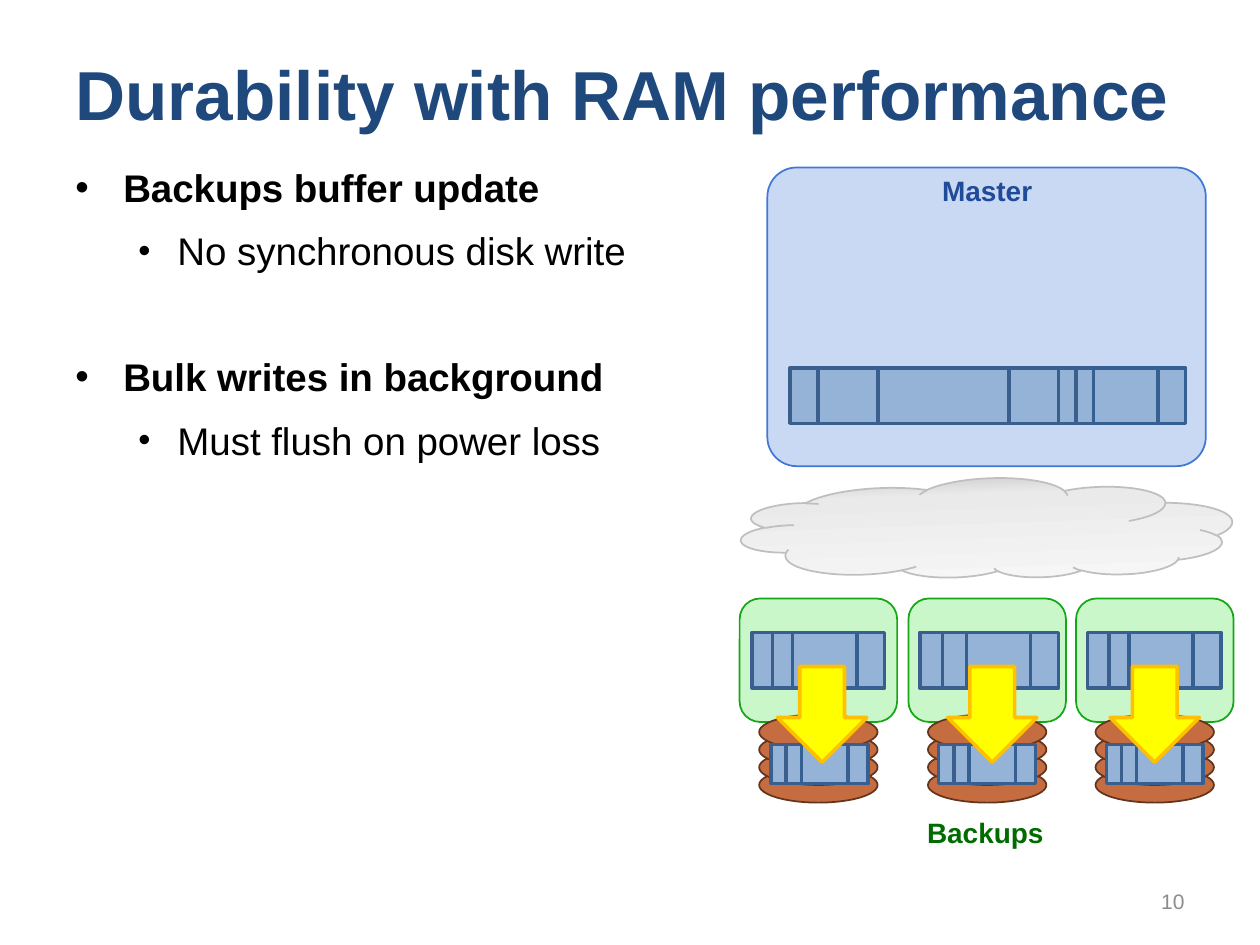
from copy import deepcopy
from typing import NamedTuple

from lxml import etree
from pptx import Presentation
from pptx.dml.color import RGBColor
from pptx.enum.shapes import MSO_SHAPE
from pptx.enum.text import MSO_ANCHOR, MSO_AUTO_SIZE, PP_ALIGN
from pptx.oxml.ns import qn
from pptx.util import Inches, Pt

RECT, ROUND = MSO_SHAPE.RECTANGLE, MSO_SHAPE.ROUNDED_RECTANGLE
OVAL, CLOUD, DOWN = MSO_SHAPE.OVAL, MSO_SHAPE.CLOUD, MSO_SHAPE.DOWN_ARROW
LEFT, CENTER, RIGHT = PP_ALIGN.LEFT, PP_ALIGN.CENTER, PP_ALIGN.RIGHT
TOP, MIDDLE = MSO_ANCHOR.TOP, MSO_ANCHOR.MIDDLE

COLS, ROWS = 1000, 750
CELL = Inches(0.01)
FONT = "Arial"
COLORS = {
    "title": "1F497D", "text": "000000", "number": "8C8C8C",
    "master": "C9D8F3", "master_line": "4177D7", "master_text": "204B98",
    "backup": "C9F7C9", "backup_line": "15A715", "backup_text": "006C00",
    "disk": "C56D41", "disk_line": "64351E",
    "log": "95B3D7", "log_line": "3A5F8C", "log_tail_line": "376092",
    "arrow": "FFFF00", "arrow_line": "FFC000",
    "cloud_line": "BFBFBF", "cloud_light": "F8F8F8",
    "cloud_mid": "EAEAEA", "cloud_dark": "C0C0C0",
}


class Box(NamedTuple):
    col: float
    row: float
    cols: float
    rows: float

    def emu(self) -> tuple:
        return tuple(round(v * CELL) for v in self)


class Backup(NamedTuple):
    left: int
    log_left: int
    log_widths: tuple
    disk_log_left: int
    arrow_left: int


class Bullet(NamedTuple):
    text: str
    level: int
    before: float


MASTER_LOG = (22, 48, 104, 39, 14, 14, 51, 22)
DISK_LOG = (12, 12, 37, 16)
DISK_ROWS = (609, 595, 581, 567)
BACKUPS = (
    Backup(587, 597, (16, 16, 51, 22), 612, 617),
    Backup(721, 730, (18, 19, 51, 22), 745, 752),
    Backup(854, 863, (17, 16, 51, 22), 878, 881),
)
BULLETS = (
    Bullet("Backups buffer update", 0, 3),
    Bullet("No synchronous disk write", 1, 3),
    Bullet("Bulk writes in background", 0, 38.4),
    Bullet("Must flush on power loss", 1, 3),
)


def rgb(name: str) -> RGBColor:
    return RGBColor.from_string(COLORS[name])


def write(p, text: str, *, size: float, color: str, bold: bool = False,
          align=LEFT) -> None:
    p.alignment = align
    r = p.add_run()
    r.text = text
    r.font.name, r.font.size, r.font.bold = FONT, Pt(size), bold
    r.font.color.rgb = rgb(color)


def add_text(shapes, box: Box, *, wrap: bool = True, anchor=TOP):
    tf = shapes.add_textbox(*box.emu()).text_frame
    tf.word_wrap, tf.vertical_anchor = wrap, anchor
    return tf


def add_shape(shapes, kind, box: Box, fill: str, line: str, width: float = 1):
    sp = shapes.add_shape(kind, *box.emu())
    sp.shadow.inherit = False
    sp.fill.solid()
    sp.fill.fore_color.rgb = rgb(fill)
    sp.line.color.rgb = rgb(line)
    sp.line.width = Pt(width)
    return sp


def add_log(shapes, left: int, row: int, height: int, widths: tuple) -> None:
    for i, width in enumerate(widths):
        line = "log_tail_line" if i >= len(widths) - 2 else "log_line"
        add_shape(shapes, RECT, Box(left, row, width, height), "log", line, 2)
        left += width


def add_cloud(shapes) -> None:
    sp = add_shape(shapes, CLOUD, Box(588, 380, 390, 80),
                   "cloud_light", "cloud_line")
    sp.rotation = 358
    spPr = sp.element.spPr
    spPr.find(qn("a:xfrm")).set("flipV", "1")
    sp.fill.gradient()
    sp.fill.gradient_angle = 270
    stops = spPr.find(".//" + qn("a:gsLst"))
    stops.append(deepcopy(stops[0]))
    tones = ((0, "cloud_light"), (0.76, "cloud_mid"), (1, "cloud_dark"))
    for stop, (position, color) in zip(sp.fill.gradient_stops, tones):
        stop.position = position
        stop.color.rgb = rgb(color)


def add_backup_server(shapes, backup: Backup) -> None:
    add_shape(shapes, ROUND, Box(backup.left, 475, 125, 98),
              "backup", "backup_line")
    for row in DISK_ROWS:
        add_shape(shapes, OVAL, Box(backup.left + 15.5, row, 94, 28),
                  "disk", "disk_line")


def add_bullets(shapes) -> None:
    tf = add_text(shapes, Box(50, 125, 458, 545))
    for i, bullet in enumerate(BULLETS):
        p = tf.paragraphs[0] if i == 0 else tf.add_paragraph()
        p.level = bullet.level
        p.space_before, p.space_after = Pt(bullet.before), Pt(7)
        write(p, bullet.text, size=22, color="text", bold=bullet.level == 0)
        margin, indent, percent = ((38, 38, 100), (81, 31, 90))[bullet.level]
        pPr = p._p.get_or_add_pPr()
        pPr.set("marL", str(margin * CELL))
        pPr.set("indent", str(-indent * CELL))
        etree.SubElement(pPr, qn("a:buSzPct")).set("val", str(percent * 1000))
        etree.SubElement(pPr, qn("a:buFont")).set("typeface", FONT)
        etree.SubElement(pPr, qn("a:buChar")).set("char", "•")


def add_title(s) -> None:
    sp = s.shapes.title
    sp.left, sp.top, sp.width, sp.height = Box(50, 30, 900, 87).emu()
    tf = sp.text_frame
    tf.auto_size, tf.vertical_anchor = MSO_AUTO_SIZE.NONE, MIDDLE
    write(tf.paragraphs[0], "Durability with RAM performance",
          size=39.6, color="title", bold=True)


def main() -> None:
    prs = Presentation()
    prs.slide_width, prs.slide_height = COLS * CELL, ROWS * CELL
    s = prs.slides.add_slide(prs.slide_layouts[5])
    shapes = s.shapes
    add_title(s)
    tf = add_text(shapes, Box(717, 695, 233, 40), anchor=MIDDLE)
    write(tf.paragraphs[0], "10", size=12, color="number", align=RIGHT)

    add_cloud(shapes)
    sp = add_shape(shapes, ROUND, Box(609, 133, 348, 237),
                   "master", "master_line")
    sp.adjustments[0] = 0.098
    tf = add_text(shapes, Box(737, 133, 93, 37), wrap=False)
    write(tf.paragraphs[0], "Master", size=16, color="master_text",
          bold=True, align=CENTER)
    add_log(shapes, 627, 292, 44, MASTER_LOG)

    servers = shapes.add_group_shape().shapes
    tf = add_text(servers, Box(726, 642, 113, 37), wrap=False)
    write(tf.paragraphs[0], "Backups", size=16, color="backup_text", bold=True)
    for backup in BACKUPS:
        add_backup_server(servers, backup)
    add_bullets(shapes)
    for backup in BACKUPS:
        add_log(shapes.add_group_shape().shapes, backup.disk_log_left,
                591, 31, DISK_LOG)
        add_log(shapes, backup.log_left, 502, 44, backup.log_widths)
        add_shape(shapes, DOWN, Box(backup.arrow_left, 529, 71, 76),
                  "arrow", "arrow_line", 2)
    prs.save("out.pptx")


if __name__ == "__main__":
    main()
